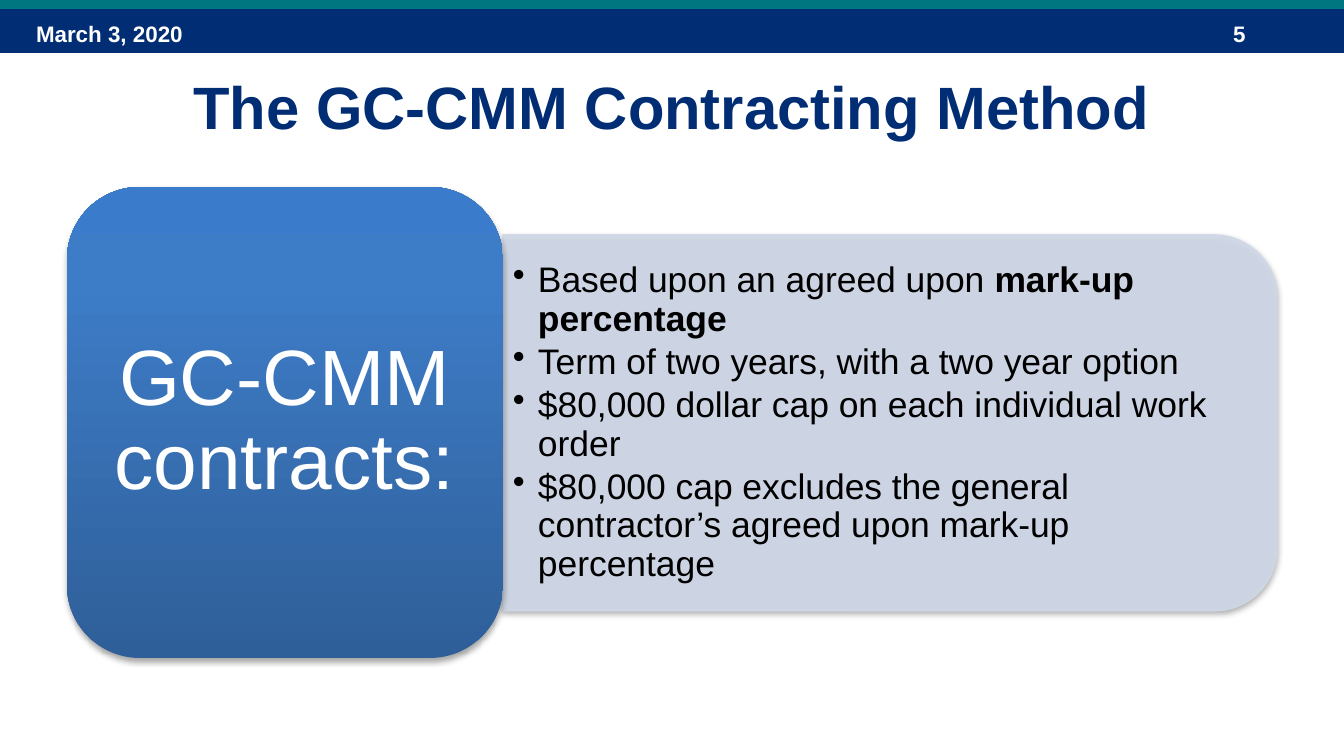
from copy import deepcopy
from dataclasses import dataclass

from lxml import etree
from pptx import Presentation
from pptx.dml.color import RGBColor
from pptx.enum.shapes import MSO_SHAPE
from pptx.enum.text import MSO_ANCHOR, PP_ALIGN
from pptx.oxml.ns import qn
from pptx.util import Pt

RECT = MSO_SHAPE.RECTANGLE
ROUNDED = MSO_SHAPE.ROUNDED_RECTANGLE
ROUND_TOP = MSO_SHAPE.ROUND_2_SAME_RECTANGLE
TOP, MIDDLE = MSO_ANCHOR.TOP, MSO_ANCHOR.MIDDLE
LEFT, CENTER = PP_ALIGN.LEFT, PP_ALIGN.CENTER

EMU_PER_PX = 914400 / 134.4
FONT = "Arial"
COLORS = {
    "navy": "002D73",
    "teal": "007681",
    "white": "FFFFFF",
    "black": "000000",
    "pale": "D0D8E8",
    "blue_bottom": "2F5F99",
    "blue_mid": "3D7CC7",
    "blue_top": "3A7CCB",
}
HANGING = 25


@dataclass(frozen=True)
class Box:
    left: int
    top: int
    width: int
    height: int


@dataclass(frozen=True)
class Label:
    box: Box
    paragraphs: tuple  # each paragraph is a tuple of (text, bold) runs
    size: int
    color: str
    align: PP_ALIGN = LEFT
    anchor: MSO_ANCHOR = TOP
    inset: tuple[int, int] = (13, 7)
    line_spacing: float = 1.0
    space_after: float = 0
    bullet: str = ""


def px(value: int) -> int:
    return round(value * EMU_PER_PX)


def rgb(name: str) -> RGBColor:
    return RGBColor.from_string(COLORS[name])


def add_block(slide, kind, box: Box, color: str):
    block = slide.shapes.add_shape(
        kind, px(box.left), px(box.top), px(box.width), px(box.height))
    block.shadow.inherit = False
    block.fill.solid()
    block.fill.fore_color.rgb = rgb(color)
    block.line.fill.background()
    return block


def add_soft_shadow(block) -> None:
    effects = block._element.spPr.find(qn("a:effectLst"))
    shadow = etree.SubElement(effects, qn("a:outerShdw"), blurRad="40000",
                              dist="23000", dir="5400000", rotWithShape="0")
    tint = etree.SubElement(shadow, qn("a:srgbClr"), val=COLORS["black"])
    etree.SubElement(tint, qn("a:alpha"), val="35000")


def set_gradient(block, stops: tuple, angle: int) -> None:
    block.fill.gradient()
    block.fill.gradient_angle = angle
    stop_list = block._element.spPr.find(".//" + qn("a:gsLst"))
    while len(stop_list) < len(stops):
        stop_list.append(deepcopy(stop_list[0]))
    for stop, (position, color) in zip(block.fill.gradient_stops, stops):
        stop.position = position
        stop.color.rgb = rgb(color)


def add_bullet(paragraph, mark: str) -> None:
    properties = paragraph._p.get_or_add_pPr()
    properties.set("marL", str(px(HANGING)))
    properties.set("indent", str(-px(HANGING)))
    etree.SubElement(properties, qn("a:buChar"), char=mark)


def add_label(slide, label: Label) -> None:
    box = label.box
    frame = slide.shapes.add_textbox(
        px(box.left), px(box.top), px(box.width), px(box.height)).text_frame
    side, edge = map(px, label.inset)
    frame_format = {
        "word_wrap": True, "vertical_anchor": label.anchor,
        "margin_left": side, "margin_right": side,
        "margin_top": edge, "margin_bottom": edge,
    }
    for name, value in frame_format.items():
        setattr(frame, name, value)
    for index, runs in enumerate(label.paragraphs):
        paragraph = frame.add_paragraph() if index else frame.paragraphs[0]
        if label.bullet:
            add_bullet(paragraph, label.bullet)
        paragraph_format = {
            "alignment": label.align, "line_spacing": label.line_spacing,
            "space_after": Pt(label.space_after),
        }
        for name, value in paragraph_format.items():
            setattr(paragraph, name, value)
        for text, bold in runs:
            run = paragraph.add_run()
            run.text = text
            font_format = {"name": FONT, "size": Pt(label.size), "bold": bold}
            for name, value in font_format.items():
                setattr(run.font, name, value)
            run.font.color.rgb = rgb(label.color)


def main() -> None:
    deck = Presentation()
    deck.slide_width, deck.slide_height = px(1344), px(756)
    slide = deck.slides.add_slide(deck.slide_layouts[6])

    # Header band
    add_block(slide, RECT, Box(0, 9, 1344, 44), "navy")
    add_block(slide, RECT, Box(0, -3, 1344, 12), "teal")
    for text, left, width in (("March 3, 2020", 23, 313), ("5", 1220, 101)):
        add_label(slide, Label(Box(left, 13, width, 40), (((text, True),),),
                               12, "white"))

    # Title
    add_label(slide, Label(
        Box(67, 54, 1210, 104), ((("The GC-CMM Contracting Method", True),),),
        32, "navy", CENTER, MIDDLE))

    # Contract terms panel, turned so that its rounded side faces right
    terms_panel = add_block(slide, ROUND_TOP, Box(702, 36, 376, 774), "pale")
    terms_panel.rotation = 90
    terms_panel.line.color.rgb = rgb("pale")
    terms_panel.line.width = Pt(0.75)
    for tint in terms_panel._element.spPr.iter(qn("a:srgbClr")):
        etree.SubElement(tint, qn("a:alpha"), val="90000")
    add_soft_shadow(terms_panel)
    terms = (
        (("Based upon an agreed upon ", False), ("mark-up percentage", True)),
        (("Term of two years, with a two year option", False),),
        (("$80,000 dollar cap on each individual work order", False),),
        (("$80,000 cap excludes the general contractor’s agreed upon "
          "mark-up percentage", False),),
    )
    add_label(slide, Label(
        Box(503, 253, 755, 340), terms, 19, "black", LEFT, MIDDLE,
        inset=(10, 5), line_spacing=0.9, space_after=2.7, bullet="•"))

    # Contract heading block
    heading_block = add_block(slide, ROUNDED, Box(67, 187, 436, 471), "blue_mid")
    set_gradient(heading_block, ((0, "blue_bottom"), (0.8, "blue_mid"),
                                 (1, "blue_top")), 90)
    add_soft_shadow(heading_block)
    add_label(slide, Label(
        Box(88, 208, 393, 428), ((("GC-CMM contracts:", False),),),
        42, "white", CENTER, MIDDLE, inset=(23, 12), line_spacing=0.9))

    deck.save("out.pptx")


if __name__ == "__main__":
    main()
